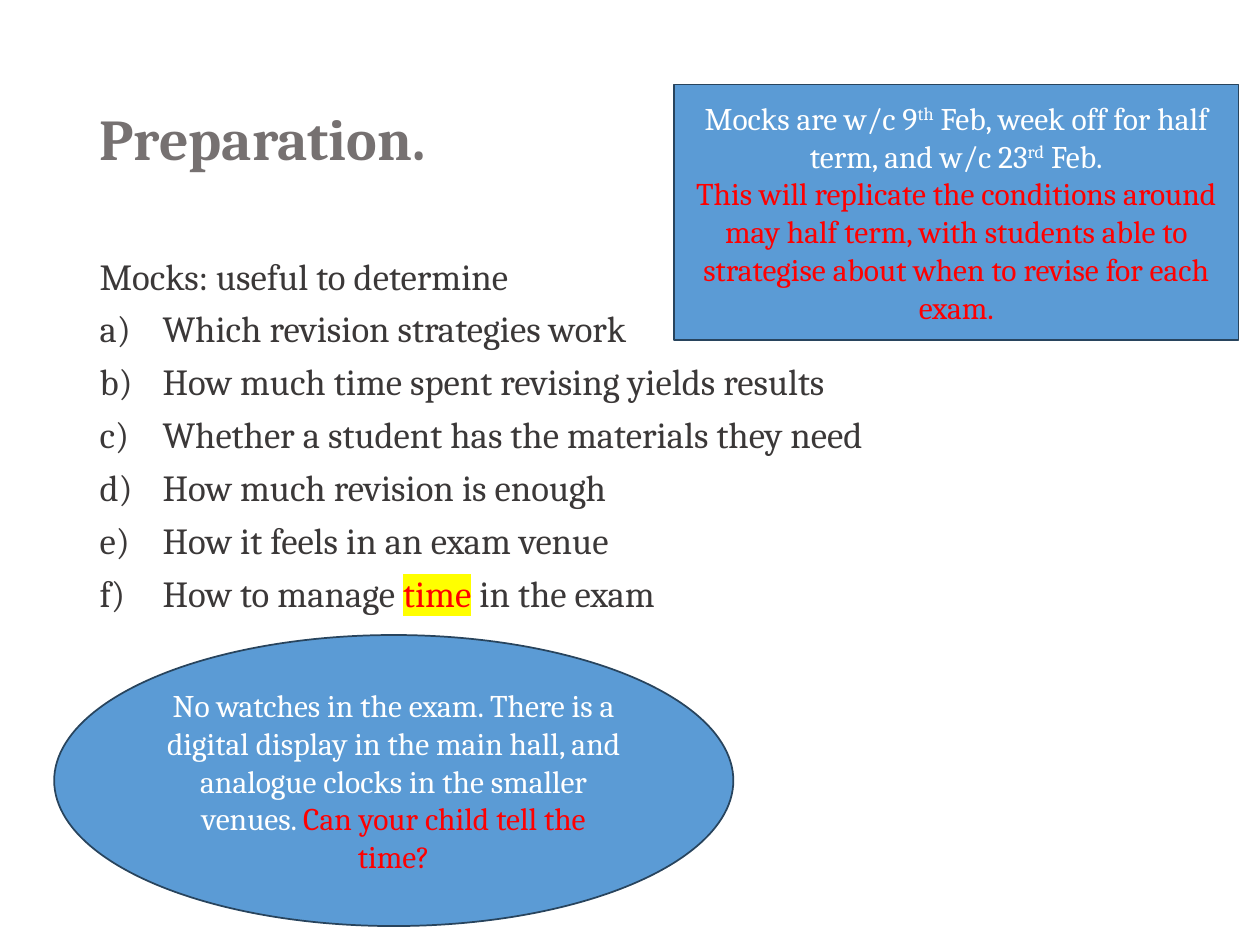
from dataclasses import dataclass

from lxml import etree
from pptx import Presentation
from pptx.dml.color import RGBColor
from pptx.enum.shapes import MSO_SHAPE
from pptx.enum.text import MSO_ANCHOR, MSO_AUTO_SIZE, PP_ALIGN
from pptx.oxml.ns import qn
from pptx.util import Inches, Pt

ELLIPSE = MSO_SHAPE.OVAL
RECTANGLE = MSO_SHAPE.RECTANGLE
MIDDLE = MSO_ANCHOR.MIDDLE
TOP = MSO_ANCHOR.TOP
CENTER = PP_ALIGN.CENTER
LEFT = PP_ALIGN.LEFT
NO_AUTOFIT = MSO_AUTO_SIZE.NONE

FONT = "Cambria"
GREY = "767171"
DARK = "3B3838"
WHITE = "FFFFFF"
RED = "FF0000"
YELLOW = "FFFF00"
BLUE = "5B9BD5"
NAVY = "28445D"


@dataclass
class Span:
    text: str
    color: str
    highlight: str = ""
    raised: bool = False


@dataclass
class Callout:
    preset: MSO_SHAPE
    box: tuple[float, float, float, float]
    paragraphs: list[list[Span]]


MOCK_USES = [
    [Span("Which revision strategies work", DARK)],
    [Span("How much time spent revising yields results", DARK)],
    [Span("Whether a student has the materials they need", DARK)],
    [Span("How much revision is enough", DARK)],
    [Span("How it feels in an exam venue", DARK)],
    [
        Span("How to manage ", DARK),
        Span("time", RED, highlight=YELLOW),
        Span(" in the exam", DARK),
    ],
]

CALLOUTS = [
    Callout(ELLIPSE, (0.43, 5.04, 5.39, 2.31), [[
        Span("No watches in the exam. There is a digital display in the main hall, "
             "and analogue clocks in the smaller venues. ", WHITE),
        Span("Can your child tell the time?", RED),
    ]]),
    Callout(RECTANGLE, (5.35, 0.67, 4.48, 2.03), [
        [
            Span("Mocks are w/c 9", WHITE),
            Span("th", WHITE, raised=True),
            Span(" Feb, week off for half term, and w/c 23", WHITE),
            Span("rd", WHITE, raised=True),
            Span(" Feb.", WHITE),
        ],
        [Span("This will replicate the conditions around may half term, with students "
              "able to strategise about when to revise for each exam.", RED)],
    ]),
]


def rgb(value: str) -> RGBColor:
    return RGBColor.from_string(value)


def place(shape, left: float, top: float, width: float, height: float) -> None:
    shape.left, shape.top = Inches(left), Inches(top)
    shape.width, shape.height = Inches(width), Inches(height)


def write_spans(paragraph, spans: list[Span], size: float, bold: bool = False) -> None:
    for span in spans:
        run = paragraph.add_run()
        run.text = span.text
        run.font.size = Pt(size)
        run.font.bold = bold
        run.font.color.rgb = rgb(span.color)
        properties = run.font._element
        if span.highlight:
            marker = etree.SubElement(properties, qn("a:highlight"))
            etree.SubElement(marker, qn("a:srgbClr"), val=span.highlight)
        if span.raised:
            properties.set("baseline", "30000")
        run.font.name = FONT


def set_bullet(paragraph, lettered: bool) -> None:
    properties = paragraph._p.get_or_add_pPr()
    indent = Inches(0.5) if lettered else 0
    properties.set("marL", str(indent))
    properties.set("indent", str(-indent))
    if lettered:
        etree.SubElement(properties, qn("a:buFont"), typeface="+mj-lt")
        etree.SubElement(properties, qn("a:buAutoNum"), type="alphaLcParenR")
    else:
        etree.SubElement(properties, qn("a:buNone"))


def write_title(title) -> None:
    place(title, 0.69, 0.4, 8.62, 1.45)
    frame = title.text_frame
    frame.auto_size = NO_AUTOFIT
    frame.vertical_anchor = MIDDLE
    heading = frame.paragraphs[0]
    heading.alignment = LEFT
    heading.line_spacing = 0.9
    write_spans(heading, [Span("Preparation.", GREY)], 33, bold=True)


def write_list(body) -> None:
    place(body, 0.69, 2, 8.62, 4.76)
    frame = body.text_frame
    frame.auto_size = NO_AUTOFIT
    frame.vertical_anchor = TOP
    lines = [[Span("Mocks: useful to determine", DARK)], *MOCK_USES]
    for number, spans in enumerate(lines):
        paragraph = frame.add_paragraph() if number else frame.paragraphs[0]
        set_bullet(paragraph, lettered=number > 0)
        paragraph.line_spacing = 0.9
        paragraph.space_before = Pt(7.5 if number else 0)
        write_spans(paragraph, spans, 21)


def draw_callout(slide, callout: Callout) -> None:
    shape = slide.shapes.add_shape(callout.preset, *map(Inches, callout.box))
    shape.shadow.inherit = False
    shape.fill.solid()
    shape.fill.fore_color.rgb = rgb(BLUE)
    shape.line.color.rgb = rgb(NAVY)
    shape.line.width = Pt(1)
    frame = shape.text_frame
    frame.word_wrap = True
    frame.vertical_anchor = MIDDLE
    for number, spans in enumerate(callout.paragraphs):
        paragraph = frame.add_paragraph() if number else frame.paragraphs[0]
        paragraph.alignment = CENTER
        write_spans(paragraph, spans, 18)


def main() -> None:
    presentation = Presentation()
    presentation.slide_width = Inches(10)
    presentation.slide_height = Inches(7.5)
    slide = presentation.slides.add_slide(presentation.slide_layouts[1])
    write_title(slide.shapes.title)
    write_list(slide.placeholders[1])
    for callout in CALLOUTS:
        draw_callout(slide, callout)
    presentation.save("out.pptx")


if __name__ == "__main__":
    main()
